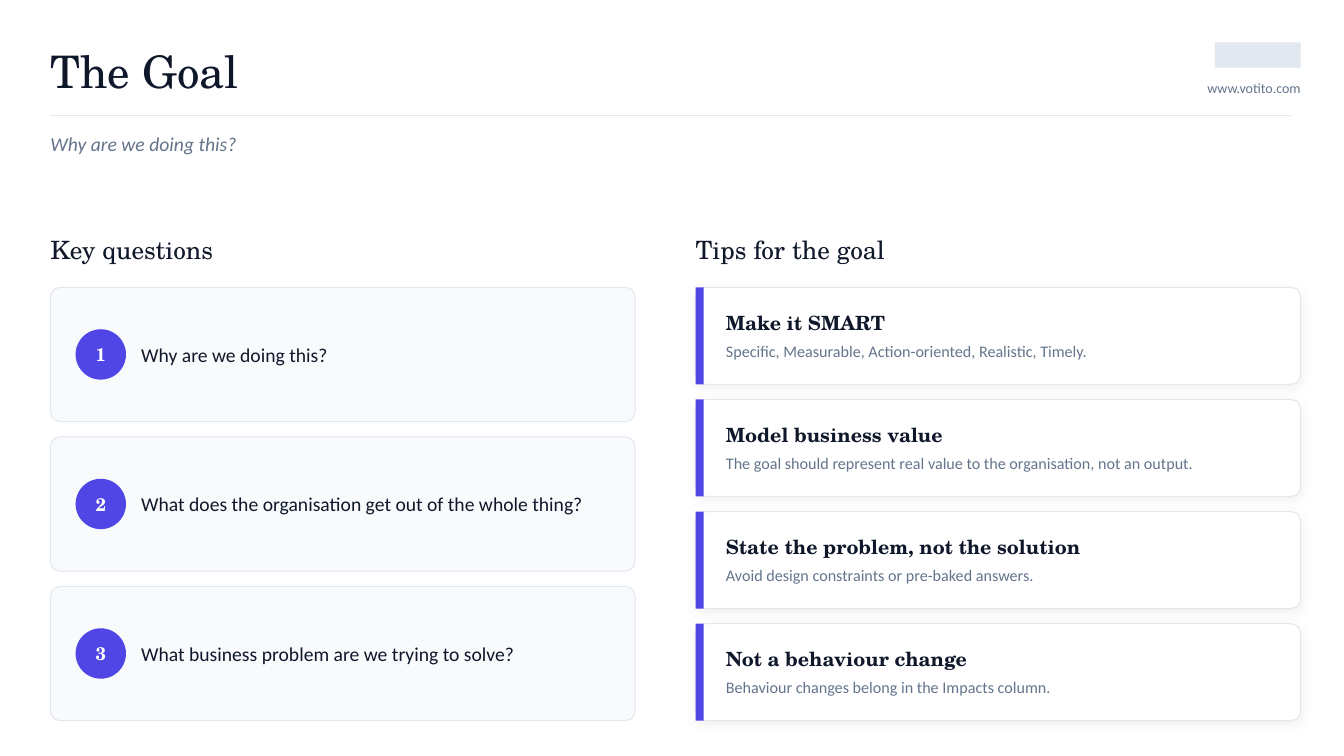
from lxml import etree
from pptx import Presentation
from pptx.dml.color import RGBColor
from pptx.enum.shapes import MSO_CONNECTOR, MSO_SHAPE
from pptx.enum.text import MSO_ANCHOR, MSO_AUTO_SIZE, PP_ALIGN
from pptx.oxml import parse_xml
from pptx.oxml.ns import nsdecls, qn
from pptx.util import Inches, Pt

INK = RGBColor(0x0F, 0x17, 0x2A)
MUTED = RGBColor(0x64, 0x74, 0x8B)
INDIGO = RGBColor(0x4F, 0x46, 0xE5)
RULE = RGBColor(0xE2, 0xE8, 0xF0)
PALE = RGBColor(0xF8, 0xFA, 0xFC)
WHITE = RGBColor(0xFF, 0xFF, 0xFF)
SERIF, SANS = "TeX Gyre Schola", "Calibri"

QUESTIONS = [
    "Why are we doing this?",
    "What does the organisation get out of the whole thing?",
    "What business problem are we trying to solve?",
]
TIPS = [
    ("Make it SMART", "Specific, Measurable, Action-oriented, Realistic, Timely."),
    ("Model business value",
     "The goal should represent real value to the organisation, not an output."),
    ("State the problem, not the solution", "Avoid design constraints or pre-baked answers."),
    ("Not a behaviour change", "Behaviour changes belong in the Impacts column."),
]
CARDS_TOP, CARDS_HEIGHT, GAP, RADIUS = 2.85, 4.3, 0.15, 0.1

prs = Presentation()
prs.slide_width, prs.slide_height = Inches(13.33), Inches(7.5)
slide = prs.slides.add_slide(prs.slide_layouts[5])
shapes = slide.shapes


def write(holder, lines, align=PP_ALIGN.LEFT):
    """Fill a shape, without margins, with (text, size, font, colour, bold) lines."""
    frame = holder.text_frame
    frame.word_wrap = True
    frame.auto_size = MSO_AUTO_SIZE.NONE
    frame.vertical_anchor = MSO_ANCHOR.MIDDLE
    frame.margin_left = frame.margin_right = frame.margin_top = frame.margin_bottom = 0
    for index, (text, size, face, colour, bold) in enumerate(lines):
        line = frame.add_paragraph() if index else frame.paragraphs[0]
        line.text, line.alignment = text, align
        line.font.size, line.font.name, line.font.bold = Pt(size), face, bold
        line.font.color.rgb = colour
    return frame.paragraphs


def add_block(kind, left, top, width, height, fill, outline=None):
    block = shapes.add_shape(kind, Inches(left), Inches(top), Inches(width), Inches(height))
    block.shadow.inherit = False
    block.fill.solid()
    block.fill.fore_color.rgb = fill
    if outline is None:
        block.line.fill.background()
    else:
        block.line.color.rgb = outline
        block.line.width = Pt(0.75)
    if kind == MSO_SHAPE.ROUNDED_RECTANGLE:
        block.adjustments[0] = RADIUS / height
    return block


# Header
title = shapes.title
title.left, title.top, title.width, title.height = (
    Inches(0.5), Inches(0.35), Inches(9), Inches(0.7))
write(title, [("The Goal", 32, SERIF, INK, False)])

add_block(MSO_SHAPE.RECTANGLE, 12.05, 0.42, 0.85, 0.25, RULE)

address = shapes.add_textbox(Inches(10.3), Inches(0.72), Inches(2.6), Inches(0.3))
write(address, [("www.votito.com", 10, SANS, MUTED, False)], PP_ALIGN.RIGHT)

divider = shapes.add_connector(
    MSO_CONNECTOR.STRAIGHT, Inches(0.5), Inches(1.15), Inches(12.8), Inches(1.15))
divider.line.color.rgb = RULE
divider.line.width = Pt(0.75)
etree.SubElement(divider._element.spPr, qn("a:effectLst"))

subtitle = shapes.add_textbox(Inches(0.5), Inches(1.25), Inches(12.3), Inches(0.35))
write(subtitle, [("Why are we doing this?", 14, SANS, MUTED, False)])[0].font.italic = True

for heading, left, width in [("Key questions", 0.5, 5.8), ("Tips for the goal", 6.9, 6)]:
    heading_box = shapes.add_textbox(Inches(left), Inches(2.25), Inches(width), Inches(0.45))
    write(heading_box, [(heading, 18, SERIF, INK, False)])

# Key questions
height = (CARDS_HEIGHT - GAP * (len(QUESTIONS) - 1)) / len(QUESTIONS)
for index, question in enumerate(QUESTIONS):
    top = CARDS_TOP + index * (height + GAP)
    add_block(MSO_SHAPE.ROUNDED_RECTANGLE, 0.5, top, 5.8, height, PALE, RULE)
    badge = add_block(MSO_SHAPE.OVAL, 0.75, top + (height - 0.5) / 2, 0.5, 0.5, INDIGO)
    write(badge, [(str(index + 1), 13, SERIF, WHITE, True)], PP_ALIGN.CENTER)
    question_box = shapes.add_textbox(Inches(1.4), Inches(top), Inches(4.75), Inches(height))
    write(question_box, [(question, 14, SANS, INK, False)])

# Tips
height = (CARDS_HEIGHT - GAP * (len(TIPS) - 1)) / len(TIPS)
for index, (tip, detail) in enumerate(TIPS):
    top = CARDS_TOP + index * (height + GAP)
    card = add_block(MSO_SHAPE.ROUNDED_RECTANGLE, 6.9, top, 6, height, WHITE, RULE)
    card._element.spPr.find(qn("a:effectLst")).append(parse_xml(
        f'<a:outerShdw {nsdecls("a")} blurRad="{Pt(8)}" dist="{Pt(2)}" dir="5400000" '
        'algn="bl" rotWithShape="0"><a:srgbClr val="000000"><a:alpha val="5000"/>'
        '</a:srgbClr></a:outerShdw>'))
    add_block(MSO_SHAPE.RECTANGLE, 6.9, top, 0.08, height, INDIGO)
    tip_box = shapes.add_textbox(Inches(7.2), Inches(top), Inches(5.6), Inches(height))
    tip_lines = write(tip_box, [(tip, 14, SERIF, INK, True), (detail, 11.5, SANS, MUTED, False)])
    tip_lines[1].space_before = Pt(5)

prs.save("out.pptx")
